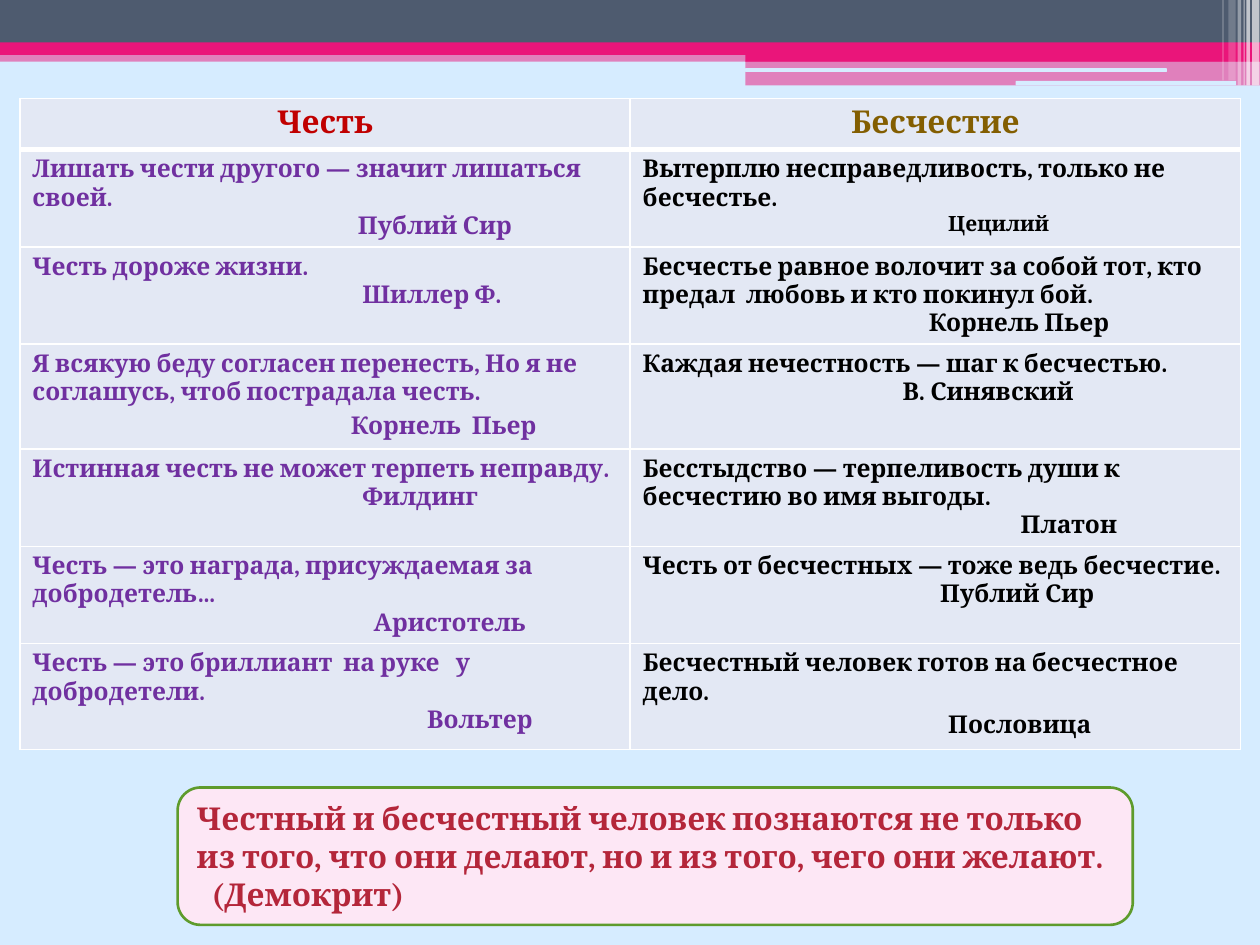
from lxml import etree
from pptx import Presentation
from pptx import util as u
from pptx.dml.color import RGBColor
from pptx.enum import shapes, text
from pptx.oxml.ns import qn

COLORS = {
    "sky": "D6ECFF", "slate": "4E5B6F", "pink": "EA157A", "white": "FFFFFF",
    "cell": "E3E8F4", "red": "C00000", "brown": "835E01", "purple": "7030A0",
    "black": "000000", "blush": "FDE7F5", "green": "5E9B2C", "crimson": "B4263A",
}
FONT = "Cambria"

# Header bands: left, top, width, height, colour, opacity %, rounded
BANDS = [
    (0, 28.8, 720, 6.5, "pink", 50, False),
    (0, 0, 720, 24.5, "slate", 100, False),
    (0, 24.2, 720, 7.2, "pink", 100, False),
    (426, 28.2, 294, 7, "pink", 100, False),
    (426, 34.6, 294, 14.2, "pink", 50, False),
    (425.8, 39, 241, 2.1, "sky", 100, True),
    (580.4, 46.2, 126, 2.6, "sky", 100, True),
]
# Vertical stripes at the right: left, width, height, opacity %
STRIPES = [
    (715.5, 4.2, 48.8, 65), (712.2, 2, 48.8, 65), (710.6, 0.7, 48.8, 60),
    (707.2, 2, 48.8, 40), (702, 4.2, 46, 20), (698.5, 0.7, 46, 30),
]

HEADINGS = [("Честь", "red"), ("Бесчестие", "brown")]
QUOTE_COLORS = ["purple", "black"]
# Rows: height, then per column: quote, author, author indent, author format
QUOTES = [
    (55.5, ("Лишать чести другого — значит лишаться своей.", "Публий Сир", 186, {}),
     ("Вытерплю несправедливость, только не бесчестье.", "Цецилий", 174.5, {"size": 12})),
    (55.7, ("Честь дороже жизни.", "Шиллер Ф.", 188.5, {}),
     ("Бесчестье равное волочит за собой тот, кто предал  любовь и кто покинул бой.",
      "Корнель Пьер", 163.5, {})),
    (60, ("Я всякую беду согласен перенесть, Но я не соглашусь, чтоб пострадала честь.",
          "Корнель  Пьер", 182, {"before": 3}),
     ("Каждая нечестность — шаг к бесчестью.", "В. Синявский", 148.5, {})),
    (55.5, ("Истинная честь не может терпеть неправду.", "Филдинг", 188.5, {}),
     ("Бесстыдство — терпеливость души к бесчестию во имя выгоды.", "Платон", 216, {})),
    (55.5, ("Честь — это награда, присуждаемая за добродетель…", "Аристотель", 195, {}),
     ("Честь от бесчестных — тоже ведь бесчестие.", "Публий Сир", 170, {})),
    (60.5, ("Честь — это бриллиант  на руке   у добродетели.", "Вольтер", 225.5, {}),
     ("Бесчестный человек готов на бесчестное дело.", "Пословица", 174.5, {"before": 3})),
]
HEADING_HEIGHT = 29.3
TABLE_LEFT, TABLE_TOP, COLUMN_WIDTH = 11.3, 56.2, 348.8

CONCLUSION = ("Честный и бесчестный человек познаются не только из того, "
              "что они делают, но и из того, чего они желают.")
CONCLUSION_AUTHOR = "(Демокрит)"


def rgb(name):
    return RGBColor.from_string(COLORS[name])


def paint(fill, color, opacity=100):
    fill.solid()
    fill.fore_color.rgb = rgb(color)
    if opacity < 100:
        color_element = fill._xPr.find(qn("a:solidFill"))[0]
        etree.SubElement(color_element, qn("a:alpha"), val=str(opacity * 1000))


def add_box(slide, left, top, width, height, color, opacity=100, rounded=False):
    kind = shapes.MSO_SHAPE.ROUNDED_RECTANGLE if rounded else shapes.MSO_SHAPE.RECTANGLE
    shape = slide.shapes.add_shape(kind, *map(u.Pt, (left, top, width, height)))
    shape.shadow.inherit = False
    shape.line.fill.background()
    paint(shape.fill, color, opacity)
    return shape


def write(paragraph, words, color, size, align=text.PP_ALIGN.LEFT, indent=0, before=0):
    paragraph.alignment = align
    paragraph.space_before = u.Pt(before)
    if indent:
        properties = paragraph._p.get_or_add_pPr()
        properties.set("marL", str(int(u.Pt(indent))))
        properties.set("indent", "0")
    run = paragraph.add_run()
    run.text = words
    for name, value in {"name": FONT, "size": u.Pt(size), "bold": True}.items():
        setattr(run.font, name, value)
    run.font.color.rgb = rgb(color)


def style_cell(cell, row):
    """White borders, thick under the heading row, and one flat fill."""
    properties = cell._tc.get_or_add_tcPr()
    widths = {"lnL": 1, "lnR": 1, "lnT": 3 if row == 1 else 1, "lnB": 3 if row == 0 else 1}
    for side, width in widths.items():
        line = etree.SubElement(properties, qn("a:" + side), w=str(int(u.Pt(width))))
        fill = etree.SubElement(line, qn("a:solidFill"))
        etree.SubElement(fill, qn("a:srgbClr"), val=COLORS["white"])
    paint(cell.fill, "cell")


def add_quote_table(slide):
    heights = [HEADING_HEIGHT] + [row[0] for row in QUOTES]
    frame = slide.shapes.add_table(
        len(heights), len(HEADINGS), u.Pt(TABLE_LEFT), u.Pt(TABLE_TOP),
        u.Pt(COLUMN_WIDTH * len(HEADINGS)), u.Pt(sum(heights)))
    table = frame.table
    for column in table.columns:
        column.width = u.Pt(COLUMN_WIDTH)
    for row, height in enumerate(heights):
        table.rows[row].height = u.Pt(height)
        for column in range(len(HEADINGS)):
            cell = table.cell(row, column)
            style_cell(cell, row)
            first = cell.text_frame.paragraphs[0]
            if row == 0:
                words, color = HEADINGS[column]
                write(first, words, color, 18, text.PP_ALIGN.CENTER)
                continue
            quote, author, indent, extra = QUOTES[row - 1][column + 1]
            color = QUOTE_COLORS[column]
            write(first, quote, color, 14)
            write(cell.text_frame.add_paragraph(), author, color,
                  **{"size": 14, "indent": indent, **extra})


def add_conclusion(slide):
    box = add_box(slide, 101.5, 450, 545.8, 78.5, "blush", rounded=True)
    box.line.color.rgb = rgb("green")
    box.line.width = u.Pt(1.5)
    frame = box.text_frame
    for name, value in {"word_wrap": True, "vertical_anchor": text.MSO_ANCHOR.MIDDLE}.items():
        setattr(frame, name, value)
    write(frame.paragraphs[0], CONCLUSION, "crimson", 18)
    write(frame.add_paragraph(), CONCLUSION_AUTHOR, "crimson", 18, indent=8.5)


def main():
    presentation = Presentation()
    presentation.slide_width, presentation.slide_height = u.Pt(720), u.Pt(540)
    slide = presentation.slides.add_slide(presentation.slide_layouts[6])
    paint(slide.background.fill, "sky")

    # Decorated header
    for band in BANDS:
        add_box(slide, *band)
    for left, width, height, opacity in STRIPES:
        add_box(slide, left, 0, width, height, "white", opacity)

    # Content
    add_quote_table(slide)
    add_conclusion(slide)
    presentation.save("out.pptx")


if __name__ == "__main__":
    main()
